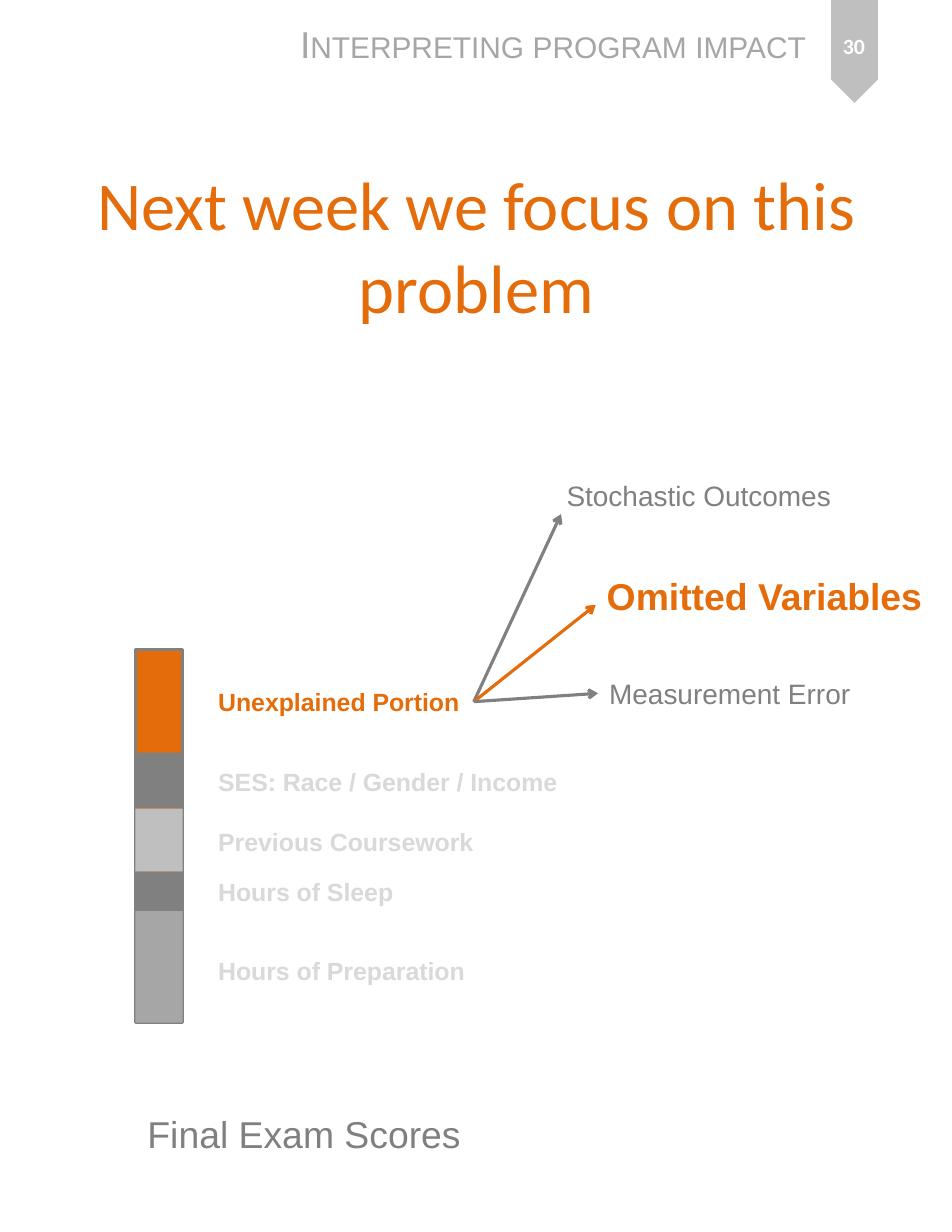
from lxml import etree
from pptx import Presentation
from pptx.dml.color import RGBColor
from pptx.enum.shapes import MSO_CONNECTOR, MSO_SHAPE
from pptx.enum.text import MSO_ANCHOR, MSO_AUTO_SIZE, PP_ALIGN
from pptx.oxml.ns import qn
from pptx.util import Pt

RECTANGLE, PENTAGON = MSO_SHAPE.RECTANGLE, MSO_SHAPE.PENTAGON
STRAIGHT = MSO_CONNECTOR.STRAIGHT
LEFT, CENTER = PP_ALIGN.LEFT, PP_ALIGN.CENTER
TOP, MIDDLE = MSO_ANCHOR.TOP, MSO_ANCHOR.MIDDLE
FIT_SHAPE, NO_FIT = MSO_AUTO_SIZE.SHAPE_TO_FIT_TEXT, MSO_AUTO_SIZE.NONE
LEFT_SIDE, RIGHT_SIDE = 1, 3

ORANGE = RGBColor(0xE4, 0x6C, 0x0A)
DARK = RGBColor(0x80, 0x80, 0x80)
MEDIUM = RGBColor(0xA6, 0xA6, 0xA6)
LIGHT = RGBColor(0xBF, 0xBF, 0xBF)
PALE = RGBColor(0xD9, 0xD9, 0xD9)
WHITE = RGBColor(0xFF, 0xFF, 0xFF)


class Page:
    line_width = Pt(2)

    def __init__(self, deck):
        self.shapes = deck.slides.add_slide(deck.slide_layouts[6]).shapes

    def block(self, kind, left, top, width, height, fill, line=None):
        shape = self.shapes.add_shape(kind, Pt(left), Pt(top), Pt(width), Pt(height))
        shape.shadow.inherit = False
        shape.fill.solid()
        shape.fill.fore_color.rgb = fill
        if line is None:
            shape.line.fill.background()
        else:
            shape.line.color.rgb = line
            shape.line.width = self.line_width
        return shape

    def text(self, words, left, top, width, height, size, color, bold=False,
             font="Arial", align=LEFT, anchor=TOP, wrap=False, small_caps=False):
        box = self.shapes.add_textbox(Pt(left), Pt(top), Pt(width), Pt(height))
        frame = box.text_frame
        frame.word_wrap = wrap
        frame.auto_size = NO_FIT if wrap else FIT_SHAPE
        frame.vertical_anchor = anchor
        para = frame.paragraphs[0]
        para.alignment = align
        span = para.add_run()
        span.text = words
        span.font.name = font
        span.font.size = Pt(size)
        span.font.bold = bold
        span.font.color.rgb = color
        if small_caps:
            span.font._element.set("cap", "small")
        return box

    def arrow(self, start_box, end, color, end_box=None):
        arrow = self.shapes.add_connector(STRAIGHT, 0, 0, Pt(end[0]), Pt(end[1]))
        arrow.begin_connect(start_box, RIGHT_SIDE)
        if end_box is not None:
            arrow.end_connect(end_box, LEFT_SIDE)
        arrow.line.color.rgb = color
        arrow.line.width = self.line_width
        etree.SubElement(arrow.line._get_or_add_ln(), qn("a:tailEnd"), type="arrow")
        etree.SubElement(arrow._element.spPr, qn("a:effectLst"))


deck = Presentation()
deck.slide_width, deck.slide_height = Pt(612), Pt(792)
page = Page(deck)

# Header and page number
ribbon = page.block(PENTAGON, 516.2, 18, 66.2, 30.2, LIGHT)
ribbon.rotation = 90
page.text("Interpreting program impact", 185.8, 10.1, 357, 36, 24, MEDIUM,
          small_caps=True)
page.text("30", 524.9, 7.9, 48.2, 42.5, 14, WHITE, bold=True, font="Calibri",
          align=CENTER, anchor=MIDDLE, wrap=True)

# Title
page.text("Next week we focus on this problem", 31, 91.4, 550.8, 131.8, 44, ORANGE,
          font="Calibri", align=CENTER, anchor=MIDDLE, wrap=True)

# Stacked bar: orange remainder behind, explained parts in front
BAR_LEFT, BAR_TOP, BAR_WIDTH, BAR_BOTTOM = 87.1, 417.6, 30.4, 657.4
page.block(RECTANGLE, BAR_LEFT, BAR_TOP, BAR_WIDTH, BAR_BOTTOM - BAR_TOP, ORANGE, DARK)
edges = [483.8, 519.8, 560.4, 585.8, BAR_BOTTOM]
for top, bottom, fill in zip(edges, edges[1:], [DARK, LIGHT, DARK, MEDIUM]):
    page.block(RECTANGLE, BAR_LEFT, top, BAR_WIDTH, bottom - top, fill)
page.text("Final Exam Scores", 86.4, 710.6, 218.2, 36, 24, DARK, align=CENTER)

# Labels beside the bar
LABEL_LEFT, LABEL_HEIGHT = 133.2, 26.6
for words, top, width in [
    ("SES: Race / Gender / Income", 489.6, 235.4),
    ("Previous Coursework", 527.8, 180.7),
    ("Hours of Sleep", 560.2, 128.2),
    ("Hours of Preparation", 610.6, 175),
]:
    page.text(words, LABEL_LEFT, top, width, LABEL_HEIGHT, 16, PALE, bold=True)
unexplained = page.text("Unexplained Portion", LABEL_LEFT, 437.8, 171.4, LABEL_HEIGHT,
                        16, ORANGE, bold=True)

# Sources of the unexplained portion
page.text("Stochastic Outcomes", 357.1, 303.8, 186.5, 28.8, 18, DARK)
page.text("Omitted Variables", 383, 365, 218.9, 36, 24, ORANGE, bold=True)
measurement = page.text("Measurement Error", 384.5, 431.3, 171.4, 28.8, 18, DARK)
page.arrow(unexplained, (360.7, 330.5), DARK)
page.arrow(unexplained, (383, 388.8), ORANGE)
page.arrow(unexplained, (384.5, 445.7), DARK, measurement)

deck.save("out.pptx")
